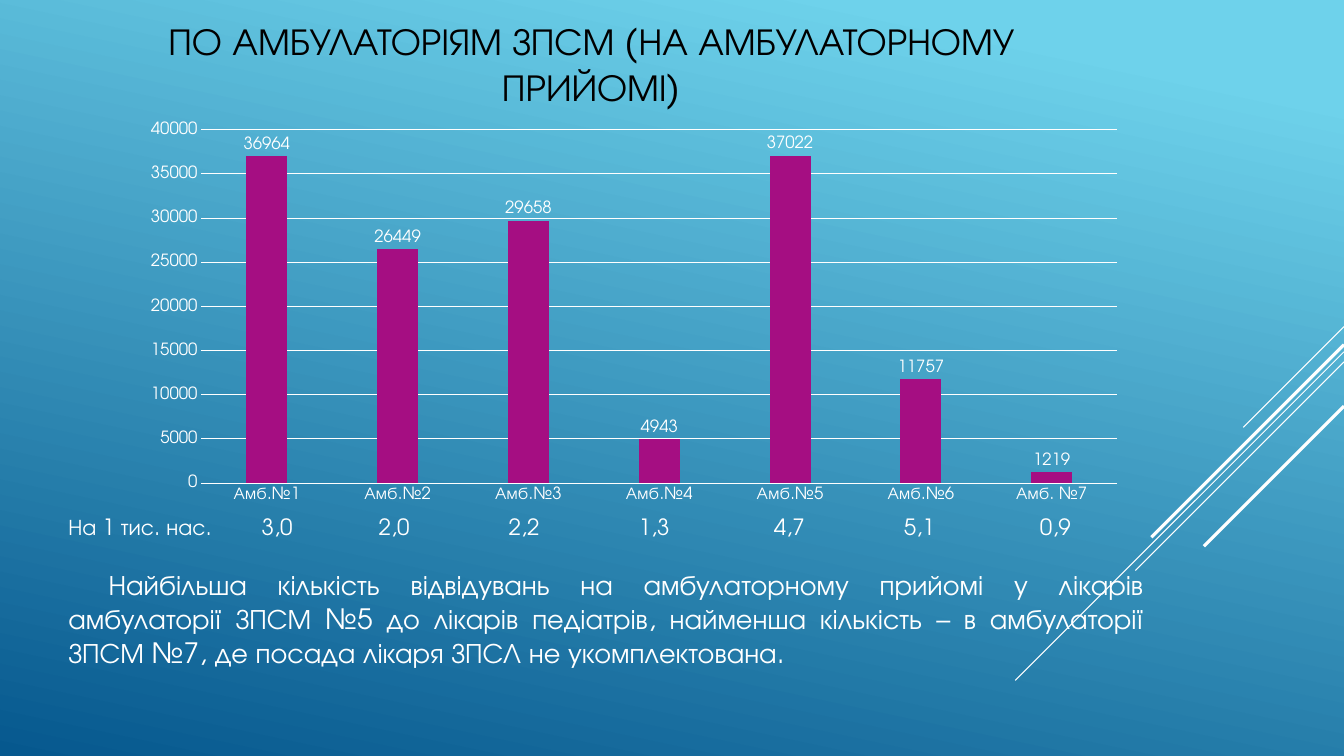
import pptx
import pptx.chart.data
import pptx.dml.color
import pptx.enum.chart
import pptx.enum.shapes
import pptx.enum.text
import pptx.oxml
import pptx.util
from pptx.util import Inches

FONT = "TeX Gyre Adventor"
WHITE = "FFFFFF"
ALIGN = pptx.enum.text.PP_ALIGN
VISITS = {
    "Амб.№1": 36964,
    "Амб.№2": 26449,
    "Амб.№3": 29658,
    "Амб.№4": 4943,
    "Амб.№5": 37022,
    "Амб.№6": 11757,
    "Амб. №7": 1219,
}
RATES = [("3,0", 2.07), ("2,0", 3.23), ("2,2", 4.52), ("1,3", 5.81),
         ("4,7", 7.15), ("5,1", 8.44), ("0,9", 9.79)]
DIAGONALS = [(3.24, 1, 0.75), (3.49, 3.26, 0.75), (3.59, 2.07, 0.75),
             (3.42, 1.91, 2.25), (4.03, 1.39, 2.25)]


def color(hex_string):
    """Turn a hex string into a colour."""
    return pptx.dml.color.RGBColor.from_string(hex_string)


def set_font(font, size, hex_string=WHITE):
    """Set typeface, size and colour of a font."""
    font.name = FONT
    font.size = pptx.util.Pt(size)
    font.color.rgb = color(hex_string)


def set_line(line, width=0.75):
    """Make a line white and of the given width."""
    line.color.rgb = color(WHITE)
    line.width = pptx.util.Pt(width)


def child_xml(prefix, name, content=""):
    """Build one drawing or chart element."""
    namespaces = pptx.oxml.ns.nsdecls(prefix)
    return pptx.oxml.parse_xml(
        f"<{prefix}:{name} {namespaces}>{content}</{prefix}:{name}>")


def set_background(slide):
    """Fill the slide with the blue gradient."""
    fill = slide.background.fill
    fill.gradient()
    fill.gradient_angle = 258
    stops = [(0.1, "6ED2EB"), (1, "06588E")]
    for stop, (position, hex_string) in zip(fill.gradient_stops, stops):
        stop.position = position
        stop.color.rgb = color(hex_string)


def add_diagonal(slide, top, length, width):
    """Draw a 45-degree line from the right edge downwards."""
    connector = slide.shapes.add_connector(
        pptx.enum.shapes.MSO_CONNECTOR.STRAIGHT, Inches(13.33), Inches(top),
        Inches(13.33 - length), Inches(top + length))
    set_line(connector.line, width)
    connector._element.spPr.append(child_xml("a", "effectLst"))


def add_text_box(slide, left, top, width, height):
    """Add a wrapping text box and return its text frame."""
    frame = slide.shapes.add_textbox(
        Inches(left), Inches(top), Inches(width), Inches(height)).text_frame
    frame.word_wrap = True
    return frame


def write(paragraph, text, size=16, hex_string=WHITE, align=ALIGN.LEFT,
          before=0, indent=0, tabs=()):
    """Write text into a paragraph with its format."""
    paragraph.alignment = align
    paragraph.space_before = pptx.util.Pt(before)
    properties = paragraph._p.get_or_add_pPr()
    if indent:
        properties.set("indent", str(Inches(indent)))
    if tabs:
        stops = "".join(f'<a:tab pos="{Inches(tab)}" algn="ctr"/>' for tab in tabs)
        properties.append(child_xml("a", "tabLst", stops))
    run = paragraph.add_run()
    run.text = text
    set_font(run.font, size, hex_string)


def add_visits_chart(slide):
    """Add the column chart of visits per clinic."""
    data = pptx.chart.data.CategoryChartData()
    data.categories = list(VISITS)
    data.add_series("Series 1", list(VISITS.values()))
    chart = slide.shapes.add_chart(
        pptx.enum.chart.XL_CHART_TYPE.COLUMN_CLUSTERED, Inches(1.3),
        Inches(1.13), Inches(9.98), Inches(3.94), data).chart
    chart.has_title = False
    chart.has_legend = False
    set_font(chart.font, 10)

    for axis in (chart.category_axis, chart.value_axis):
        axis.major_tick_mark = pptx.enum.chart.XL_TICK_MARK.NONE
        axis.minor_tick_mark = pptx.enum.chart.XL_TICK_MARK.NONE
        set_font(axis.tick_labels.font, 12)
    set_line(chart.category_axis.format.line)
    values = chart.value_axis
    values.minimum_scale, values.maximum_scale = 0, 40000
    values.major_unit = 5000
    values.format.line.fill.background()
    set_line(values.major_gridlines.format.line)

    plot = chart.plots[0]
    plot.gap_width, plot.overlap = 219, -27
    plot.vary_by_categories = False
    series = plot.series[0]
    series.format.fill.solid()
    series.format.fill.fore_color.rgb = color("A50E82")
    labels = series.data_labels
    labels.show_value = True
    labels.position = pptx.enum.chart.XL_LABEL_POSITION.OUTSIDE_END
    set_font(labels.font, 12)

    sides = {"x": 0.07, "y": 0.04, "w": 0.91, "h": 0.89}
    layout = '<c:layoutTarget val="inner"/><c:xMode val="edge"/><c:yMode val="edge"/>'
    layout += "".join(f'<c:{side} val="{part}"/>' for side, part in sides.items())
    plot_area = chart._chartSpace.chart.plotArea
    for old_layout in plot_area.findall(pptx.oxml.ns.qn("c:layout")):
        plot_area.remove(old_layout)
    plot_area.insert(0, child_xml(
        "c", "layout", f"<c:manualLayout>{layout}</c:manualLayout>"))


def main():
    """Build the slide and save it."""
    presentation = pptx.Presentation()
    presentation.slide_width = Inches(13.33)
    presentation.slide_height = Inches(7.5)
    slide = presentation.slides.add_slide(presentation.slide_layouts[6])
    set_background(slide)
    for diagonal in DIAGONALS:
        add_diagonal(slide, *diagonal)

    title = add_text_box(slide, 1.29, 0.12, 9.15, 1.02)
    title.vertical_anchor = pptx.enum.text.MSO_ANCHOR.MIDDLE
    write(title.paragraphs[0], "ПО АМБУЛАТОРІЯМ ЗПСМ (НА АМБУЛАТОРНОМУ ПРИЙОМІ)",
          size=27, hex_string="000000", align=ALIGN.CENTER)
    add_visits_chart(slide)

    summary = add_text_box(slide, 0.58, 5.04, 10.86, 1.65)
    rates, positions = zip(*RATES)
    write(summary.paragraphs[0], "\t".join(("На 1 тис. нас.", *rates)),
          tabs=positions)
    write(summary.add_paragraph(),
          "Найбільша кількість відвідувань на амбулаторному прийомі у лікарів "
          "амбулаторії ЗПСМ №5 до лікарів педіатрів, найменша кількість – "
          "в амбулаторії ЗПСМ №7, де посада лікаря ЗПСЛ не укомплектована.",
          size=20, align=ALIGN.JUSTIFY, before=20, indent=0.4)
    presentation.save("out.pptx")


if __name__ == "__main__":
    main()
